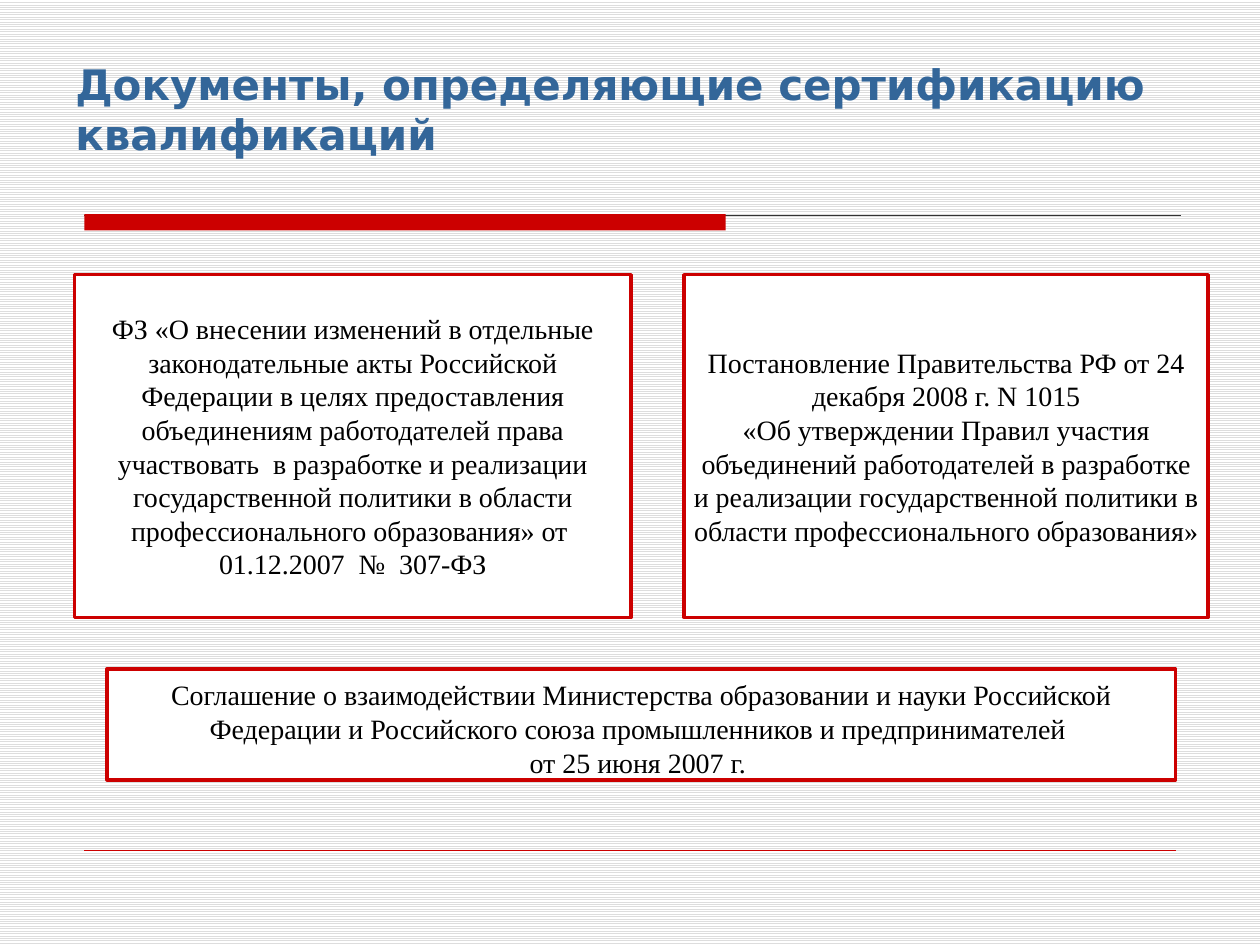
from lxml import etree
from pptx import Presentation
from pptx.dml.color import RGBColor
from pptx.enum.dml import MSO_PATTERN
from pptx.enum.shapes import MSO_CONNECTOR, MSO_SHAPE
from pptx.enum.text import MSO_ANCHOR as Anchor, PP_ALIGN as Align
from pptx.oxml.ns import qn
from pptx.util import Inches, Pt

COLORS = {"red": "CC0000", "title": "336699", "text": "000000",
          "white": "FFFFFF", "stripe": "DDDDDD", "rule": "333333"}


def color(name):
    return RGBColor.from_string(COLORS[name])


def add_rule(left, right, y, color_name, width):
    """Draw a horizontal line without a shadow."""
    rule = page.shapes.add_connector(
        MSO_CONNECTOR.STRAIGHT, Inches(left), Inches(y), Inches(right), Inches(y))
    rule.line.color.rgb = color(color_name)
    rule.line.width = Pt(width)
    etree.SubElement(rule._element.spPr, qn("a:effectLst"))


deck = Presentation()
deck.slide_width, deck.slide_height = Inches(10), Inches(7.5)
page = deck.slides.add_slide(deck.slide_layouts[6])

background = page.background.fill
background.patterned()
background.pattern = MSO_PATTERN.LIGHT_HORIZONTAL
background.fore_color.rgb = color("stripe")
background.back_color.rgb = color("white")

# Red bar with a thin rule running on to the right, and the footer rule
add_rule(0.67, 9.37, 1.71, "rule", 0.75)
bar = page.shapes.add_shape(
    MSO_SHAPE.RECTANGLE, Inches(0.67), Inches(1.7), Inches(5.09), Inches(0.13))
bar.shadow.inherit = False
bar.fill.solid()
bar.fill.fore_color.rgb = color("red")
bar.line.fill.background()
add_rule(0.67, 9.33, 6.75, "red", 0.25)

title = page.shapes.add_textbox(Inches(0.5), Inches(0), Inches(9), Inches(1.31))
frame = title.text_frame
frame.word_wrap = True
frame.vertical_anchor = Anchor.BOTTOM
para = frame.paragraphs[0]
para.text = "Документы, определяющие сертификацию квалификаций"
para.font.name = "DejaVu Sans"
para.font.size = Pt(24)
para.font.bold = True
para.font.color.rgb = color("title")

# Left, top, width, height, anchor, paragraphs
documents = [
    (0.59, 2.18, 4.42, 2.72, Anchor.MIDDLE, [
        "ФЗ «О внесении изменений в отдельные законодательные акты Российской "
        "Федерации в целях предоставления объединениям работодателей права "
        "участвовать  в разработке и реализации государственной политики в области "
        "профессионального образования» от  01.12.2007  №  307-ФЗ"]),
    (5.43, 2.18, 4.16, 2.72, Anchor.MIDDLE, [
        "Постановление Правительства РФ от 24 декабря 2008 г. N 1015\n"
        "«Об утверждении Правил участия объединений работодателей в разработке "
        "и реализации государственной политики в области профессионального "
        "образования» "]),
    (0.85, 5.31, 8.48, 0.88, Anchor.TOP, [
        "Соглашение о взаимодействии Министерства образовании и науки Российской "
        "Федерации и Российского союза промышленников и предпринимателей ",
        "от 25 июня 2007 г. "]),
]
for left, top, width, height, anchor, texts in documents:
    box = page.shapes.add_shape(
        MSO_SHAPE.RECTANGLE, Inches(left), Inches(top), Inches(width), Inches(height))
    box.shadow.inherit = False
    box.fill.solid()
    box.fill.fore_color.rgb = color("white")
    box.line.color.rgb = color("red")
    box.line.width = Pt(2)
    frame = box.text_frame
    frame.word_wrap = True
    frame.vertical_anchor = anchor
    frame.margin_left = frame.margin_right = Inches(0.07)
    frame.margin_top = frame.margin_bottom = Inches(0.07)
    for index, text in enumerate(texts):
        para = frame.add_paragraph() if index else frame.paragraphs[0]
        para.text = text
        para.alignment = Align.CENTER
        para.font.name = "Times New Roman"
        para.font.size = Pt(16)
        para.font.color.rgb = color("text")

deck.save("out.pptx")
